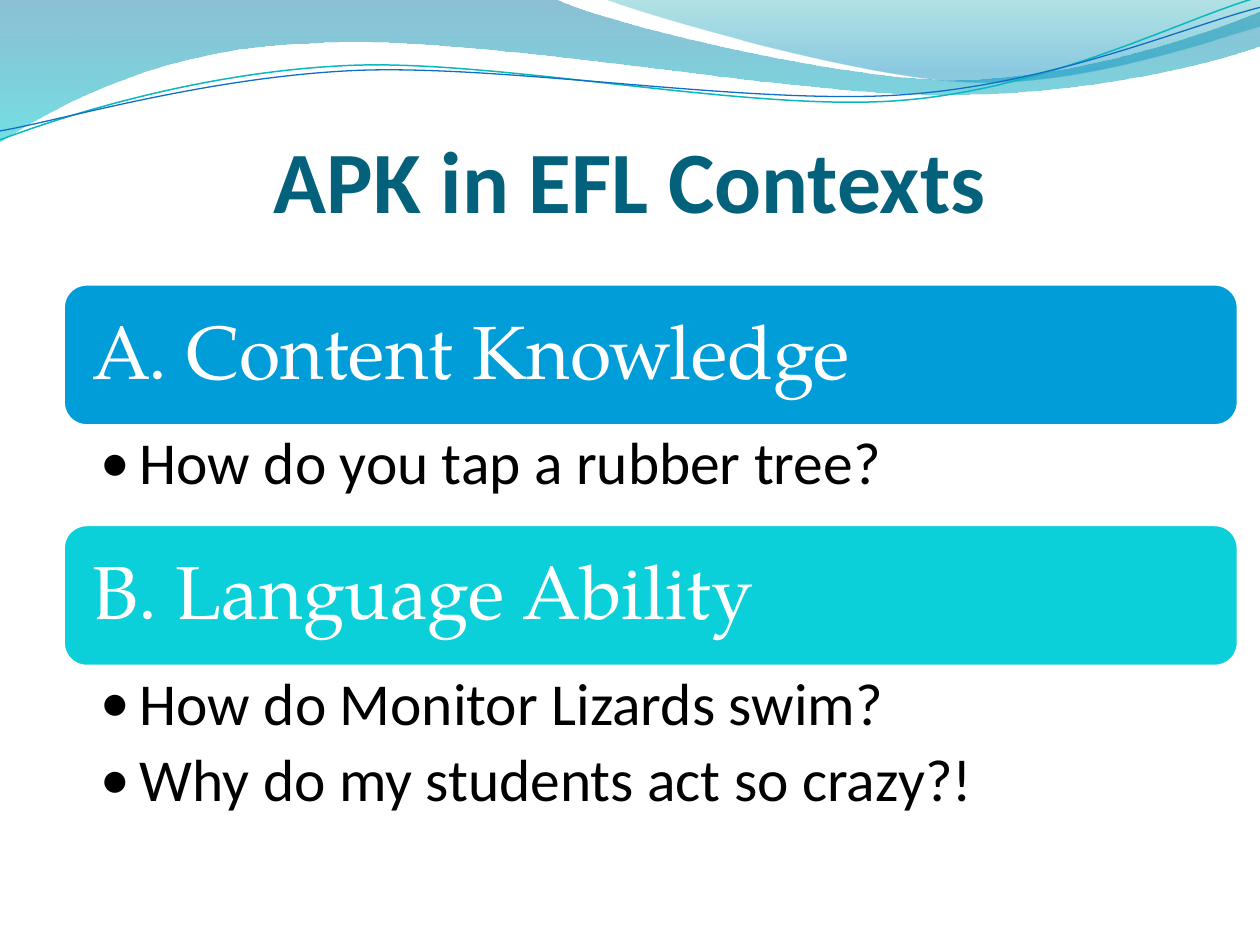
import pptx
import pptx.util
import pptx.dml.color
import pptx.enum.shapes
import pptx.enum.text
import pptx.oxml.ns
from lxml import etree
from pptx.util import Cm, Pt

COLOURS = {
    "title": "04617B", "text": "000000", "white": "FFFFFF",
    "content": "009DD9", "language": "0BD0D9",
    "deep": "0074A1", "aqua": "00C6CF", "teal": "00A1A9", "sky": "008BBF",
    "teal line": "0AB8BF", "blue line": "0F6FC6",
}

# Outlines in cm: a start point, then lines (2 numbers) or Bézier curves (6)
BROAD_WAVE = [
    (0, 0), (11.18, -0.03),
    (12.09, 0.43, 16.87, 1.6, 19.25, 1.6), (21.67, 1.6, 24.33, 0.66, 25.4, 0.23),
    (25.43, 0.91),
    (24.97, 1.12, 22.1, 1.93, 18.95, 1.91), (15.8, 1.91, 9.7, 0.71, 6.53, 0.86),
    (3.28, 0.91, 1.17, 2.11, -0.03, 2.87), (0, 0),
]
RIGHT_WAVE = [
    (12.17, -0.03),
    (12.93, 0.28, 17.32, 1.57, 19.53, 1.65), (21.74, 1.75, 24.41, 0.81, 25.4, 0.53),
    (25.4, 0), (12.17, -0.03),
]
TEAL_CURVE = [
    (0, 2.82), (1.22, 2.36, 4.01, 1.45, 7.04, 1.32),
    (10.03, 1.19, 15.06, 2.26, 18.11, 2.03), (21.16, 1.8, 23.83, 0.38, 25.35, -0.05),
]
BLUE_CURVE = [
    (0, 2.64), (1.19, 2.44, 4.17, 1.55, 7.19, 1.42),
    (10.24, 1.3, 15.16, 2.13, 18.21, 1.91), (21.23, 1.7, 23.9, 0.53, 25.4, 0.15),
]

# Heading, banner colour, height of the bullet area in cm, bullets
SECTIONS = [
    ("A. Content Knowledge", "content", 1.98, ["How do you tap a rubber tree?"]),
    ("B. Language Ability", "language", 3.28,
     ["How do Monitor Lizards swim?", "Why do my students act so crazy?!"]),
]
LEFT, TOP, WIDTH, BANNER_HEIGHT = 1.27, 5.72, 23.7, 2.87


def rgb(name):
    return pptx.dml.color.RGBColor.from_string(COLOURS[name])


def qn(tag):
    return pptx.oxml.ns.qn(tag)


def add_outline(page, outline, close):
    points = [(Cm(segment[i]), Cm(segment[i + 1]))
              for segment in outline for i in range(0, len(segment), 2)]
    builder = page.shapes.build_freeform(*points[0])
    builder.add_line_segments(points[1:], close=close)
    shape = builder.convert_to_shape()
    shape.shadow.inherit = False
    # Join the three points of each Bézier segment into one curve
    lines = iter(list(shape._element.spPr.iter(qn("a:lnTo"))))
    for segment in outline[1:]:
        first = next(lines)
        if len(segment) == 6:
            curve = etree.Element(qn("a:cubicBezTo"))
            first.addprevious(curve)
            for line in (first, next(lines), next(lines)):
                curve.append(line[0])
                line.getparent().remove(line)
    return shape


def add_wave(page, outline, stops):
    wave = add_outline(page, outline, close=True)
    wave.line.fill.background()
    wave.fill.gradient()
    wave.fill.gradient_angle = 270
    for stop, (position, colour, _) in zip(wave.fill.gradient_stops, stops):
        stop.position = position
        stop.color.rgb = rgb(colour)
    # Transparency of each gradient stop
    colours = wave._element.spPr.iter(qn("a:srgbClr"))
    for element, (_, _, opacity) in zip(colours, stops):
        alpha = etree.SubElement(element, qn("a:alpha"))
        alpha.set("val", str(opacity * 1000))


def add_curve(page, outline, colour, width):
    curve = add_outline(page, outline, close=False)
    curve.fill.background()
    curve.line.color.rgb = rgb(colour)
    curve.line.width = Pt(width)


def set_margins(frame, left, top, right, bottom):
    frame.margin_left, frame.margin_top = Cm(left), Cm(top)
    frame.margin_right, frame.margin_bottom = Cm(right), Cm(bottom)
    frame.word_wrap = True


def format_para(para, font, size, colour, align="LEFT", bold=False):
    para.alignment = getattr(pptx.enum.text.PP_ALIGN, align)
    for span in para.runs:
        span.font.name, span.font.size, span.font.bold = font, Pt(size), bold
        span.font.color.rgb = rgb(colour)


def add_title(page, text):
    title = page.shapes.title
    title.left, title.top, title.width, title.height = Cm(1.27), Cm(1.96), Cm(22.86), Cm(2.69)
    frame = title.text_frame
    frame.text = text
    frame.vertical_anchor = pptx.enum.text.MSO_ANCHOR.BOTTOM
    set_margins(frame, 0, 0.13, 0, 0)
    format_para(frame.paragraphs[0], "Calibri", 50, "title", "CENTER", True)


def add_banner(page, top, text, colour):
    banner = page.shapes.add_shape(
        pptx.enum.shapes.MSO_SHAPE.ROUNDED_RECTANGLE,
        Cm(LEFT), Cm(top), Cm(WIDTH), Cm(BANNER_HEIGHT))
    banner.shadow.inherit = False
    banner.fill.solid()
    banner.fill.fore_color.rgb = rgb(colour)
    banner.line.color.rgb = rgb("white")
    banner.line.width = Pt(2.25)
    frame = banner.text_frame
    frame.text = text
    frame.vertical_anchor = pptx.enum.text.MSO_ANCHOR.MIDDLE
    set_margins(frame, 0.45, 0.45, 0.45, 0.45)
    frame.paragraphs[0].line_spacing = 0.9
    format_para(frame.paragraphs[0], "TeX Gyre Pagella", 43, "white")


def add_bullets(page, top, height, lines):
    box = page.shapes.add_textbox(Cm(LEFT), Cm(top), Cm(WIDTH), Cm(height))
    frame = box.text_frame
    frame.text = "\n".join(lines)
    set_margins(frame, 0.76, 0.15, 0.84, 0.15)
    for para in frame.paragraphs:
        para.line_spacing = 0.9
        para.space_after = Pt(7)
        format_para(para, "Calibri", 34, "text")
        # Bullet with hanging indent
        properties = para._p.get_or_add_pPr()
        properties.set("marL", str(Cm(0.79)))
        properties.set("indent", str(-Cm(0.79)))
        etree.SubElement(properties, qn("a:buFont")).set("typeface", "Calibri")
        etree.SubElement(properties, qn("a:buChar")).set("char", "•")


def main():
    deck = pptx.Presentation()
    deck.slide_width, deck.slide_height = Cm(25.4), Cm(19.05)
    page = deck.slides.add_slide(deck.slide_layouts[5])

    # Waves along the top edge
    add_wave(page, BROAD_WAVE, [(0, "deep", 45), (1, "aqua", 55)])
    add_wave(page, RIGHT_WAVE, [(0, "teal", 30), (0.8, "sky", 45)])
    add_curve(page, TEAL_CURVE, "teal line", 0.85)
    add_curve(page, BLUE_CURVE, "blue line", 0.75)

    add_title(page, "APK in EFL Contexts")

    # Sections stacked without gaps
    top = TOP
    for heading, colour, height, lines in SECTIONS:
        add_banner(page, top, heading, colour)
        add_bullets(page, top + BANNER_HEIGHT, height, lines)
        top += BANNER_HEIGHT + height

    deck.save("out.pptx")


if __name__ == "__main__":
    main()
